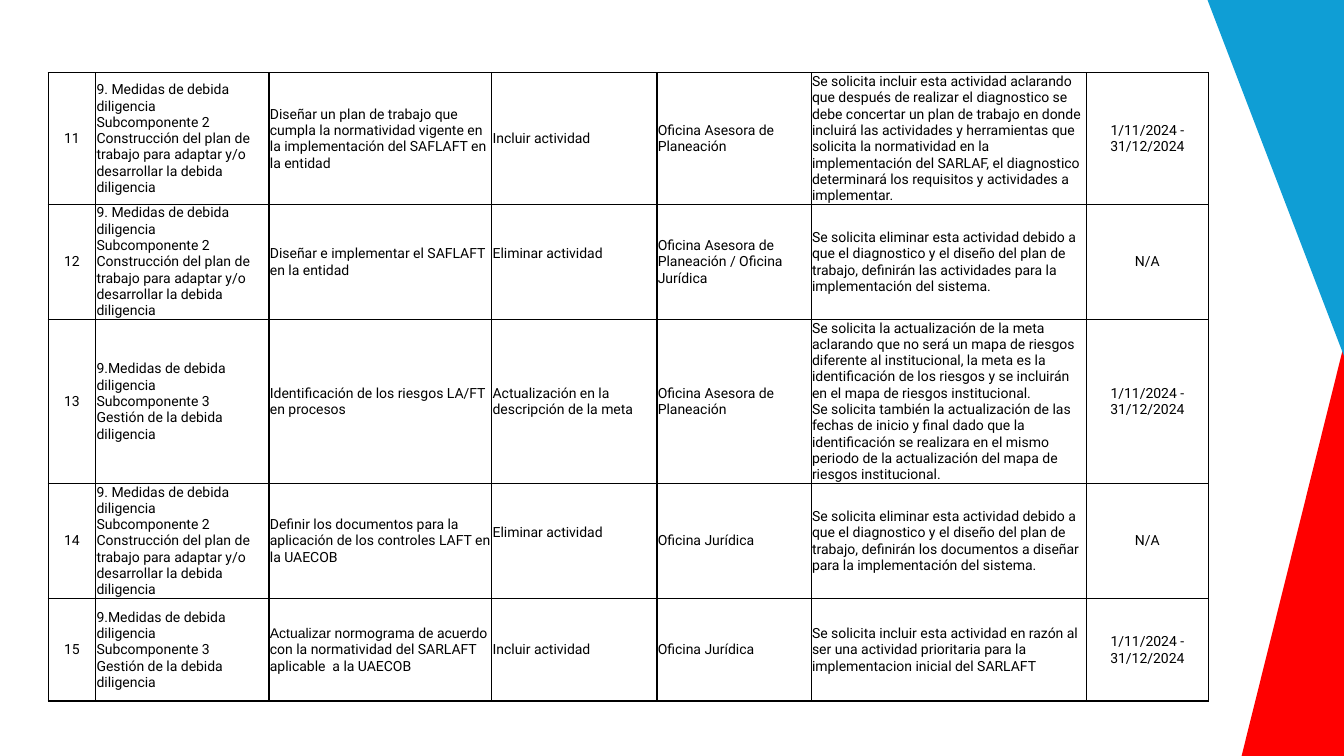
from lxml import etree
from pptx import Presentation
from pptx.dml.color import RGBColor
from pptx.enum.shapes import MSO_SHAPE
from pptx.enum.text import MSO_ANCHOR, PP_ALIGN
from pptx.oxml.ns import qn
from pptx.util import Pt

TRIANGLE = MSO_SHAPE.RIGHT_TRIANGLE
MIDDLE = MSO_ANCHOR.MIDDLE
LEFT, CENTER = PP_ALIGN.LEFT, PP_ALIGN.CENTER

WHITE = RGBColor(0xFF, 0xFF, 0xFF)
BLACK = RGBColor(0x00, 0x00, 0x00)
RED = RGBColor(0xFF, 0x00, 0x00)
BLUE = RGBColor(0x0F, 0x9E, 0xD5)

FONT, FIRST_WORD_FONT = "Roboto", "Arial"
FONT_SIZE = 10
BORDER = 1
MARGIN = 0.6

COLUMN_WIDTHS = [34, 123.8, 159.1, 118, 110.2, 196.6, 87.1]
ROW_HEIGHTS = [93.6, 82, 117.2, 82, 73.4]
CENTERED_COLUMNS = (0, 6)

# Wording that several rows share
WORK_PLAN = (
    "9. Medidas de debida diligencia\nSubcomponente 2\n"
    "Construcción del plan de trabajo para adaptar y/o desarrollar la debida diligencia"
)
MANAGEMENT = (
    "9.Medidas de debida diligencia\nSubcomponente 3\n"
    "Gestión de la debida diligencia"
)
INCLUDE, REMOVE = "Incluir actividad", "Eliminar actividad"
PLANNING, LEGAL = "Oficina Asesora de Planeación", "Oficina Jurídica"
PERIOD, NO_PERIOD = "1/11/2024 - 31/12/2024", "N/A"

ACTIVITIES = [
    ("11", WORK_PLAN,
     "Diseñar un plan de trabajo que cumpla la normatividad vigente en la "
     "implementación del SAFLAFT en la entidad",
     INCLUDE, PLANNING,
     "Se solicita incluir esta actividad aclarando que después de realizar el "
     "diagnostico se debe concertar un plan de trabajo en donde incluirá las "
     "actividades y herramientas que solicita la normatividad en la implementación "
     "del SARLAF, el diagnostico determinará los requisitos y actividades a "
     "implementar.",
     PERIOD),
    ("12", WORK_PLAN,
     "Diseñar e implementar el SAFLAFT en la entidad",
     REMOVE, PLANNING + " / " + LEGAL,
     "Se solicita eliminar esta actividad debido a que el diagnostico y el diseño "
     "del plan de trabajo, definirán las actividades para la implementación del "
     "sistema.",
     NO_PERIOD),
    ("13", MANAGEMENT,
     "Identificación de los riesgos LA/FT en procesos",
     "Actualización en la descripción de la meta", PLANNING,
     "Se solicita la actualización de la meta aclarando que no será un mapa de "
     "riesgos diferente al institucional, la meta es la identificación de los "
     "riesgos y se incluirán en el mapa de riesgos institucional.\n"
     "Se solicita también la actualización de las fechas de inicio y final dado que "
     "la identificación se realizara en el mismo periodo de la actualización del "
     "mapa de riesgos institucional.",
     PERIOD),
    ("14", WORK_PLAN,
     "Definir los documentos para la aplicación de los controles LAFT en la UAECOB",
     REMOVE, LEGAL,
     "Se solicita eliminar esta actividad debido a que el diagnostico y el diseño "
     "del plan de trabajo, definirán los documentos a diseñar para la "
     "implementación del sistema.",
     NO_PERIOD),
    ("15", MANAGEMENT,
     ("Actualizar", " normograma de acuerdo con la normatividad del "
      "SARLAFT aplicable  a la UAECOB"),
     INCLUDE, LEGAL,
     "Se solicita incluir esta actividad en razón al ser una actividad prioritaria "
     "para la implementacion inicial del SARLAFT",
     PERIOD),
]


def add_triangle(page, left, top, width, height, color):
    triangle = page.shapes.add_shape(TRIANGLE, Pt(left), Pt(top), Pt(width), Pt(height))
    triangle.shadow.inherit = False
    triangle.fill.solid()
    triangle.fill.fore_color.rgb = color
    triangle.line.fill.background()
    return triangle


def set_borders(cell):
    properties = cell._tc.get_or_add_tcPr()
    for position, side in enumerate(("a:lnL", "a:lnR", "a:lnT", "a:lnB")):
        line = etree.Element(qn(side), w=str(Pt(BORDER)))
        fill = etree.SubElement(line, qn("a:solidFill"))
        etree.SubElement(fill, qn("a:srgbClr"), val=str(BLACK))
        properties.insert(position, line)


def fill_cell(cell, content, alignment):
    cell.fill.solid()
    cell.fill.fore_color.rgb = WHITE
    set_borders(cell)
    cell.vertical_anchor = MIDDLE
    cell.margin_left = cell.margin_right = cell.margin_top = Pt(MARGIN)
    # Removal requests sit half a line above the middle
    cell.margin_bottom = Pt(12 if content == REMOVE else 0)

    para = cell.text_frame.paragraphs[0]
    para.alignment = alignment
    if isinstance(content, tuple):
        for words, font in zip(content, (FIRST_WORD_FONT, FONT)):
            span = para.add_run()
            span.text = words
            span.font.name = font
    else:
        para.text = content
        para.font.name = FONT
    para.font.size = Pt(FONT_SIZE)
    para.font.color.rgb = BLACK


def add_activity_table(page, left, top):
    frame = page.shapes.add_table(
        len(ROW_HEIGHTS), len(COLUMN_WIDTHS), Pt(left), Pt(top),
        Pt(sum(COLUMN_WIDTHS)), Pt(sum(ROW_HEIGHTS)),
    )
    table = frame.table
    table.first_row = table.horz_banding = False
    for column, width in zip(table.columns, COLUMN_WIDTHS):
        column.width = Pt(width)
    for row, height, activity in zip(table.rows, ROW_HEIGHTS, ACTIVITIES):
        row.height = Pt(height)
        for index, (cell, content) in enumerate(zip(row.cells, activity)):
            fill_cell(cell, content, CENTER if index in CENTERED_COLUMNS else LEFT)


def main():
    deck = Presentation()
    deck.slide_width, deck.slide_height = Pt(960), Pt(540)
    page = deck.slides.add_slide(deck.slide_layouts[6])

    # Coloured wedges along the right edge
    red_wedge = add_triangle(page, 862, 246.4, 98, 393.6, RED)
    red_wedge._element.spPr.find(qn("a:xfrm")).set("flipH", "1")
    blue_wedge = add_triangle(page, 862.3, -0.6, 97.7, 254.9, BLUE)
    blue_wedge.rotation = 180

    # Requested changes
    add_activity_table(page, 34.4, 52)

    deck.save("out.pptx")


if __name__ == "__main__":
    main()
